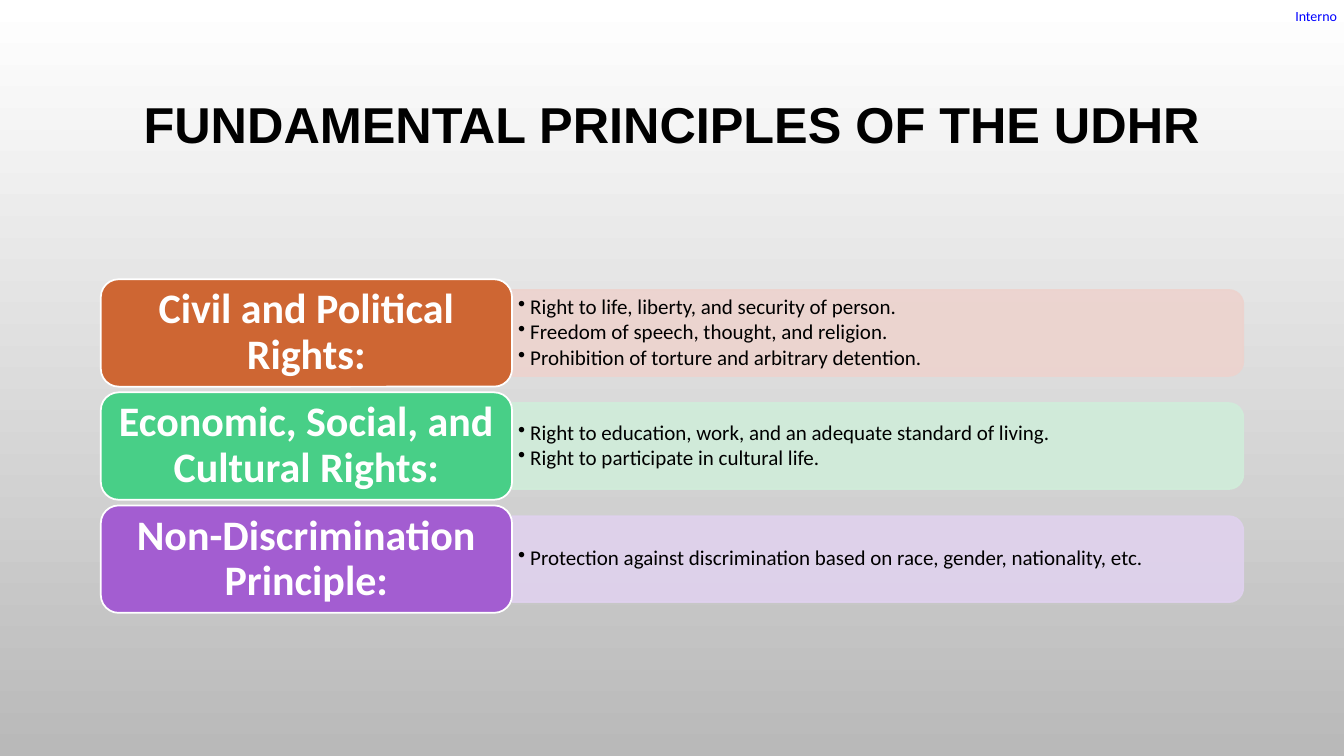
from lxml import etree
from pptx import Presentation
from pptx.dml.color import RGBColor
from pptx.enum.shapes import MSO_SHAPE
from pptx.enum.text import MSO_ANCHOR, PP_ALIGN
from pptx.oxml.ns import qn
from pptx.util import Inches, Pt

ROUND = MSO_SHAPE.ROUNDED_RECTANGLE
TAB = MSO_SHAPE.ROUND_2_SAME_RECTANGLE
MIDDLE = MSO_ANCHOR.MIDDLE
LEFT, CENTER = PP_ALIGN.LEFT, PP_ALIGN.CENTER

COLS, ROWS = 160, 90
WIDTH, HEIGHT = Inches(13.33), Inches(7.5)

COLORS = {
    "white": "FFFFFF", "gray": "B9B9B9", "black": "000000", "blue": "0000FF",
    "rust": "CE6633", "blush": "EDD3CE",
    "green": "48CF87", "mint": "D0EDDA",
    "plum": "A35DD1", "lilac": "E0D2EE",
}

RIGHTS = [
    ("Civil and Political Rights:", "rust", "blush", [
        "Right to life, liberty, and security of person.",
        "Freedom of speech, thought, and religion.",
        "Prohibition of torture and arbitrary detention."]),
    ("Economic, Social, and Cultural Rights:", "green", "mint", [
        "Right to education, work, and an adequate standard of living.",
        "Right to participate in cultural life."]),
    ("Non-Discrimination Principle:", "plum", "lilac", [
        "Protection against discrimination based on race, gender, nationality, etc."]),
]


def color(name):
    return RGBColor.from_string(COLORS[name])


def place(box):
    x, y, w, h = box
    return (round(x * WIDTH / COLS), round(y * HEIGHT / ROWS),
            round(w * WIDTH / COLS), round(h * HEIGHT / ROWS))


def write(shape, lines, size, tint="black", font="Calibri", bold=False,
          align=LEFT, pad=(0, 0, 0, 0), wrap=True, lead=0.9, after=0, bullet=False):
    frame = shape.text_frame
    frame.word_wrap = wrap
    frame.vertical_anchor = MIDDLE
    frame.margin_left, frame.margin_top, frame.margin_right, frame.margin_bottom = map(Inches, pad)
    frame.text = "\n".join(lines)
    for para in frame.paragraphs:
        if bullet:
            props = para._p.get_or_add_pPr()
            props.set("marL", str(Inches(0.12)))
            props.set("indent", str(Inches(-0.12)))
            etree.SubElement(props, qn("a:buChar")).set("char", "•")
        para.alignment = align
        para.line_spacing = lead
        para.space_after = Pt(after)
        para.font.size = Pt(size)
        para.font.name = font
        para.font.bold = bold
        para.font.color.rgb = color(tint)


def fade(shape, share):
    for tint in shape._element.spPr.iter(qn("a:srgbClr")):
        etree.SubElement(tint, qn("a:alpha")).set("val", str(share * 1000))


def block(slide, kind, box, fill, line):
    shape = slide.shapes.add_shape(kind, *place(box))
    shape.shadow.inherit = False
    shape.fill.solid()
    shape.fill.fore_color.rgb = color(fill)
    shape.line.color.rgb = color(line)
    shape.line.width = Pt(1.25)
    return shape


def text(slide, box, lines, size, **style):
    write(slide.shapes.add_textbox(*place(box)), lines, size, **style)


def paint(slide):
    fill = slide.background.fill
    fill.gradient()
    fill.gradient_angle = 270
    for stop, name in zip(fill.gradient_stops, ("white", "gray")):
        stop.color.rgb = color(name)


def header(slide, box):
    text(slide, box, ["FUNDAMENTAL PRINCIPLES OF THE UDHR"], 36, font="Arial",
         bold=True, align=CENTER, pad=(0.1, 0.05, 0.1, 0.63))


def right(slide, box, title, dark, pale, points):
    x, y, w, h = box
    label, bar = 0.36 * w, 0.8 * h
    left, wide, mid = x + label, w - label, y + h / 2
    panel = block(slide, TAB, (left + (wide - bar) / 2, mid - wide / 2, bar, wide), pale, pale)
    panel.rotation = 90
    fade(panel, 90)
    text(slide, (left, mid - 0.45 * bar, 0.995 * wide, 0.9 * bar), points, 15,
         pad=(0.06, 0.03, 0.06, 0.03), after=2, bullet=True)
    card = block(slide, ROUND, (x, y, label, h), dark, "white")
    write(card, [title], 30, tint="white", bold=True, align=CENTER,
          pad=(0.12, 0.06, 0.12, 0.06))


def table(slide, box):
    x, y, w, h = box
    pitch = h / (len(RIGHTS) - 0.05)
    for row, item in enumerate(RIGHTS):
        right(slide, (x, y + row * pitch, w, 0.95 * pitch), *item)


def main():
    deck = Presentation()
    deck.slide_width, deck.slide_height = WIDTH, HEIGHT
    slide = deck.slides.add_slide(deck.slide_layouts[6])
    paint(slide)
    text(slide, (154.2, 0.84, 5.4, 2.04), ["Interno"], 10, tint="blue", wrap=False, lead=1)
    header(slide, (12, 8.16, 136, 21))
    table(slide, (12, 33.24, 136, 39.72))
    deck.save("out.pptx")


if __name__ == "__main__":
    main()
